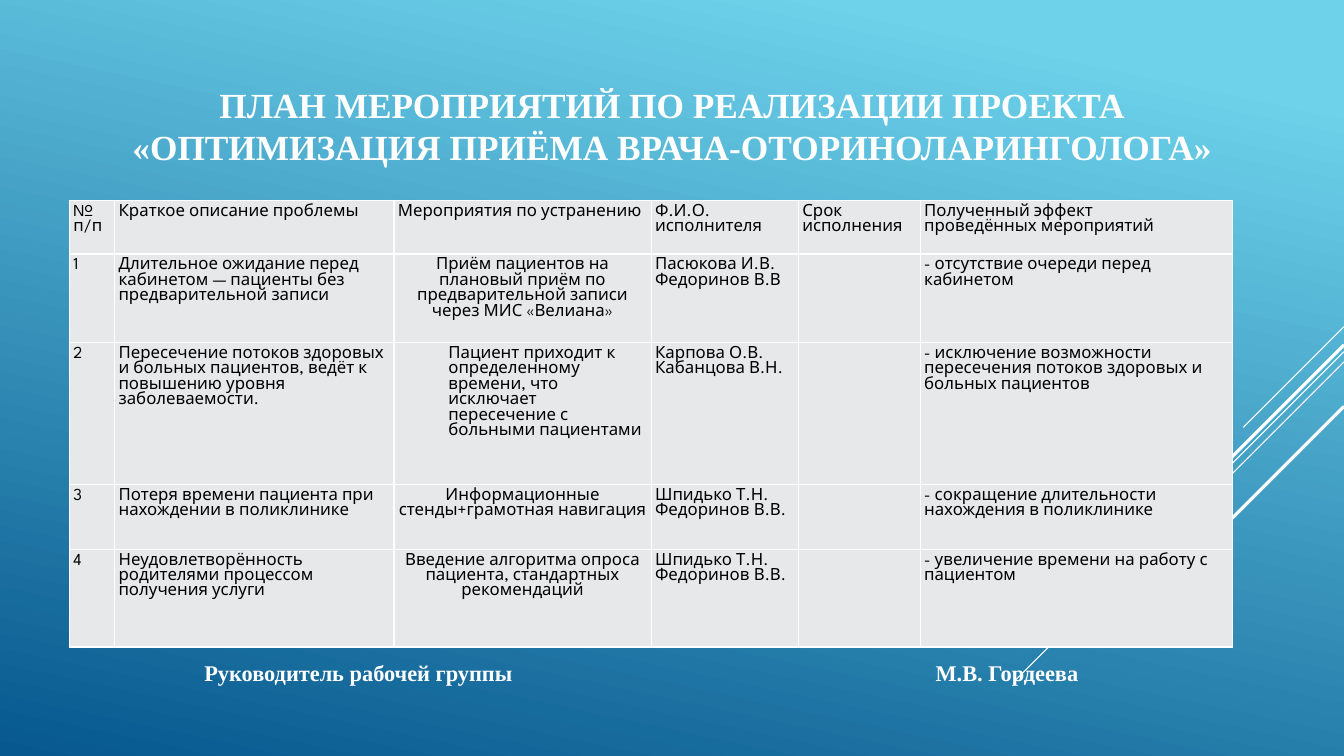
"""Build a one-slide action plan with a table, a title and a signature line."""
from lxml import etree
from pptx import Presentation
from pptx.dml.color import RGBColor
from pptx.enum.shapes import MSO_CONNECTOR
from pptx.enum.text import MSO_ANCHOR, PP_ALIGN
from pptx.oxml.ns import qn
from pptx.util import Cm, Pt

STRAIGHT = MSO_CONNECTOR.STRAIGHT
MIDDLE = MSO_ANCHOR.MIDDLE
LEFT, CENTER = PP_ALIGN.LEFT, PP_ALIGN.CENTER

WHITE, BLACK, CELL = "FFFFFF", "000000", "E7E8EA"
GRADIENT = [(0.1, "6ED2EB"), (1, "06588E")]
SERIF, SANS = "Times New Roman", "League Spartan"
WIDTH, HEIGHT = 33.87, 19.05

TITLE = "ПЛАН МЕРОПРИЯТИЙ ПО РЕАЛИЗАЦИИ ПРОЕКТА\v«ОПТИМИЗАЦИЯ ПРИЁМА ВРАЧА-ОТОРИНОЛАРИНГОЛОГА»"
SIGNATURE = "Руководитель рабочей группы\tМ.В. Гордеева"
ROWS = [
    ("№ п/п", "Краткое описание проблемы", "Мероприятия по устранению",
     "Ф.И.О.\nисполнителя", "Срок\nисполнения", "Полученный эффект\nпроведённых мероприятий"),
    ("1", "Длительное ожидание перед кабинетом — пациенты без предварительной записи",
     "Приём пациентов на плановый приём по предварительной записи через МИС «Велиана»",
     "Пасюкова И.В.\nФедоринов В.В", "", "- отсутствие очереди перед кабинетом"),
    ("2", "Пересечение потоков здоровых и больных пациентов, ведёт к повышению уровня заболеваемости.",
     "Пациент приходит к определенному времени, что исключает пересечение с больными пациентами",
     "Карпова О.В.\nКабанцова В.Н.", "",
     "- исключение возможности пересечения потоков здоровых и больных пациентов"),
    ("3", "Потеря времени пациента при нахождении в поликлинике",
     "Информационные стенды+грамотная навигация",
     "Шпидько Т.Н.\nФедоринов В.В.", "", "- сокращение длительности нахождения в поликлинике"),
    ("4", "Неудовлетворённость родителями процессом получения услуги",
     "Введение алгоритма опроса пациента, стандартных рекомендаций",
     "Шпидько Т.Н.\nФедоринов В.В.", "", "- увеличение времени на работу с пациентом"),
]
COL_WIDTHS = [1.14, 7.04, 6.48, 3.71, 3.07, 7.87]
ROW_HEIGHTS = [1.35, 2.14, 3.58, 1.63, 2.46]
CENTERED = {(1, 2), (3, 2), (4, 2)}
INDENTED = (2, 2)
# top at the right edge, horizontal and vertical run, weight
RAYS = [(8.23, 2.54, 0.75), (8.86, 8.28, 0.75), (9.12, 5.27, 0.75),
        (8.69, 4.85, 2.25), (10.24, 3.53, 2.25)]


def rgb(value):
    return RGBColor.from_string(value)


def style(p, font, size, color, bold=False, align=LEFT):
    p.alignment = align
    p.font.name, p.font.size, p.font.bold = font, Pt(size), bold
    p.font.color.rgb = rgb(color)


def add_ray(s, top, run, weight):
    ray = s.shapes.add_connector(STRAIGHT, Cm(WIDTH), Cm(top), Cm(WIDTH - run), Cm(top + run))
    ray.line.color.rgb = rgb(WHITE)
    ray.line.width = Pt(weight)
    etree.SubElement(ray._element.spPr, qn("a:effectLst"))


def add_text(s, text, left, top, width, height, size, align=LEFT):
    tf = s.shapes.add_textbox(Cm(left), Cm(top), Cm(width), Cm(height)).text_frame
    tf.word_wrap = True
    tf.vertical_anchor = MIDDLE
    p = tf.paragraphs[0]
    p.text = text
    style(p, SERIF, size, WHITE, True, align)
    return tf


def add_border(cell):
    tc_pr = cell._tc.get_or_add_tcPr()
    for i, side in enumerate(("a:lnL", "a:lnR", "a:lnT", "a:lnB")):
        ln = etree.Element(qn(side), w=str(Pt(1)))
        fill = etree.SubElement(ln, qn("a:solidFill"))
        etree.SubElement(fill, qn("a:srgbClr"), val=WHITE)
        tc_pr.insert(i, ln)


def add_plan(s):
    table = s.shapes.add_table(len(ROWS), len(COL_WIDTHS), Cm(1.75), Cm(5.05),
                               Cm(sum(COL_WIDTHS)), Cm(sum(ROW_HEIGHTS))).table
    table.first_row = table.horz_banding = False
    for col, width in zip(table.columns, COL_WIDTHS):
        col.width = Cm(width)
    for r, (row, height) in enumerate(zip(ROWS, ROW_HEIGHTS)):
        table.rows[r].height = Cm(height)
        for c, text in enumerate(row):
            cell = table.cell(r, c)
            cell.fill.solid()
            cell.fill.fore_color.rgb = rgb(CELL)
            cell.margin_left = cell.margin_right = Cm(0.1)
            cell.margin_top = cell.margin_bottom = Cm(0.1)
            add_border(cell)
            cell.text = text
            for p in cell.text_frame.paragraphs:
                style(p, SANS, 12, BLACK, align=CENTER if (r, c) in CENTERED else LEFT)
                if (r, c) == INDENTED:
                    p._p.get_or_add_pPr().set("marL", str(Cm(1.27)))


def main():
    prs = Presentation()
    prs.slide_width, prs.slide_height = Cm(WIDTH), Cm(HEIGHT)
    s = prs.slides.add_slide(prs.slide_layouts[6])
    fill = s.background.fill
    fill.gradient()
    fill.gradient_angle = 258
    for stop, (position, color) in zip(fill.gradient_stops, GRADIENT):
        stop.position = position
        stop.color.rgb = rgb(color)

    for ray in RAYS:
        add_ray(s, *ray)
    title = add_text(s, TITLE, 2.34, 2.64, 29.21, 2.06, 25.2, CENTER)
    title.margin_bottom = Cm(1.15)
    add_plan(s)
    signature = add_text(s, SIGNATURE, 4.9, 16.48, 25.25, 0.94, 16)
    tabs = etree.SubElement(signature.paragraphs[0]._p.get_or_add_pPr(), qn("a:tabLst"))
    etree.SubElement(tabs, qn("a:tab"), pos=str(Cm(18.43)), algn="l")
    p_pr = tabs.getparent()
    p_pr.insert_element_before(tabs, "a:defRPr", "a:extLst")
    prs.save("out.pptx")


if __name__ == "__main__":
    main()
